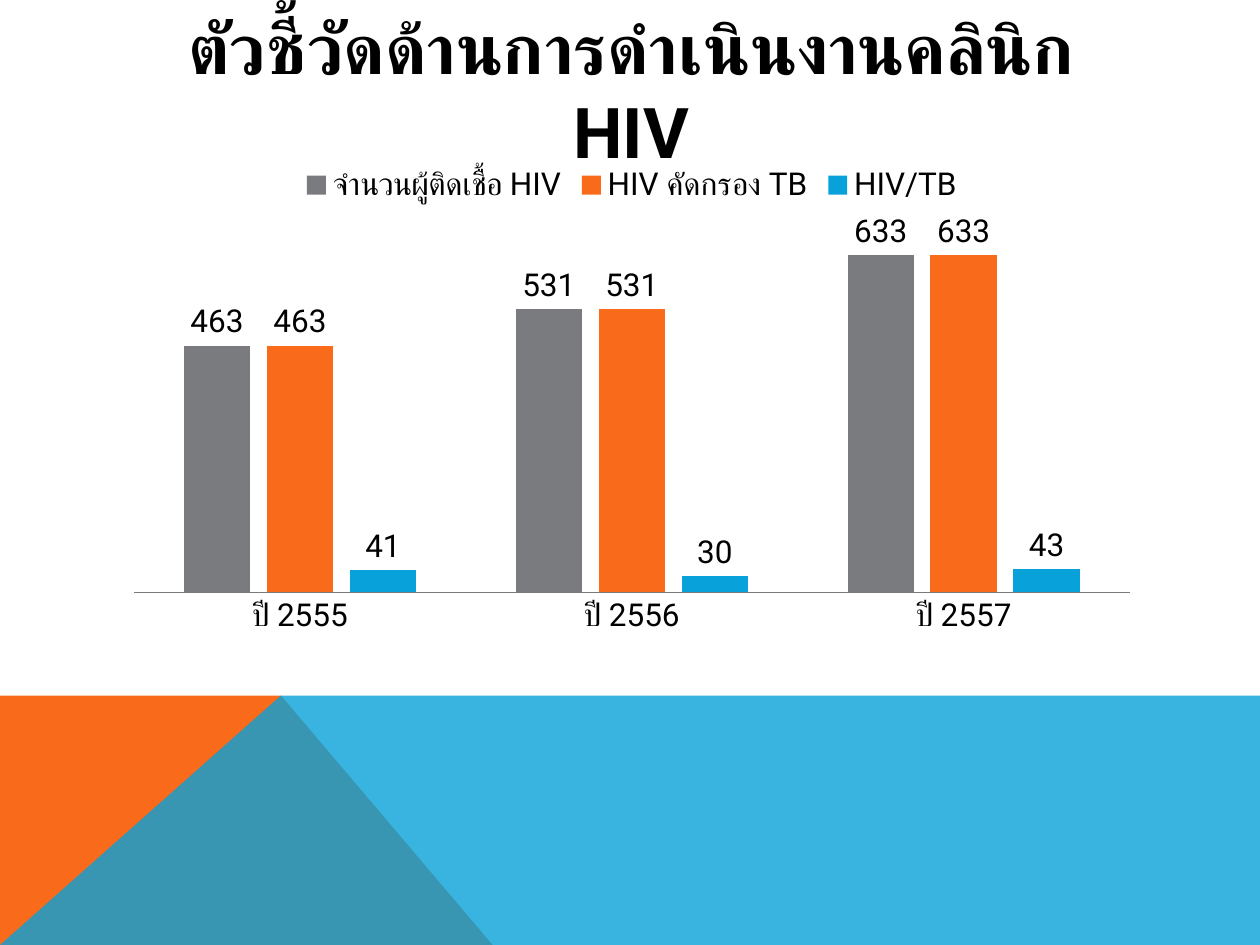
from lxml import etree
from pptx import Presentation
from pptx.chart.data import CategoryChartData
from pptx.dml.color import RGBColor
from pptx.enum import chart as ch, text
from pptx.oxml.ns import qn
from pptx.util import Inches, Pt

FONT = "Roboto"
COLORS = {"black": "000000", "gray": "797B7E", "orange": "F96A1B", "blue": "08A1D9"}
YEARS = ["ปี 2555", "ปี 2556", "ปี 2557"]
SERIES = [
    ("จำนวนผู้ติดเชื้อ HIV", (463, 531, 633), "gray"),
    ("HIV คัดกรอง TB", (463, 531, 633), "orange"),
    ("HIV/TB", (41, 30, 43), "blue"),
]


def rgb(name):
    return RGBColor.from_string(COLORS[name])


def set_font(font, size, bold=False):
    font.name, font.size, font.bold = FONT, Pt(size), bold
    font.color.rgb = rgb("black")


def add_panel(s, points, color, opacity=100):
    """Add a borderless polygon; points are in inches, opacity in percent."""
    corners = [(Inches(x), Inches(y)) for x, y in points]
    builder = s.shapes.build_freeform(*corners[0])
    builder.add_line_segments(corners[1:], close=True)
    sp = builder.convert_to_shape()
    sp.shadow.inherit = False
    sp.fill.solid()
    sp.fill.fore_color.rgb = rgb(color)
    sp.line.fill.background()
    if opacity < 100:
        clr = sp.element.spPr.find(qn("a:solidFill"))[0]
        etree.SubElement(clr, qn("a:alpha"), val=str(opacity * 1000))


def set_title(s, wording):
    sp = s.shapes.title
    sp.left, sp.top, sp.width, sp.height = map(Inches, (0.9, 0.4, 8.22, 0.6))
    tf = sp.text_frame
    tf.text = wording
    tf.word_wrap = True
    tf.auto_size = text.MSO_AUTO_SIZE.NONE
    tf.vertical_anchor = text.MSO_ANCHOR.MIDDLE
    p = tf.paragraphs[0]
    p.alignment = text.PP_ALIGN.CENTER
    r = p.runs[0]
    set_font(r.font, 40, bold=True)
    etree.SubElement(r.font._element, qn("a:cs"), typeface=FONT)


def add_column_chart(s):
    data = CategoryChartData()
    data.categories = YEARS
    for name, values, _ in SERIES:
        data.add_series(name, values)
    chart = s.shapes.add_chart(
        ch.XL_CHART_TYPE.COLUMN_CLUSTERED,
        Inches(0.9), Inches(1.2), Inches(8.23), Inches(3.91), data,
    ).chart
    set_font(chart.font, 18)
    chart.has_title = False
    chart.has_legend = True
    chart.legend.position = ch.XL_LEGEND_POSITION.TOP
    chart.legend.include_in_layout = False

    axis = chart.category_axis
    axis.major_tick_mark = ch.XL_TICK_MARK.NONE
    axis.format.line.color.rgb = rgb("gray")
    axis.format.line.width = Pt(0.75)
    values_axis = chart.value_axis
    values_axis.visible = False
    values_axis.has_major_gridlines = False
    values_axis.minimum_scale, values_axis.maximum_scale = 0, 700

    plot = chart.plots[0]
    plot.vary_by_categories = False
    plot.gap_width, plot.overlap = 150, -25
    for series, (_, _, color) in zip(plot.series, SERIES):
        series.format.fill.solid()
        series.format.fill.fore_color.rgb = rgb(color)
        labels = series.data_labels
        labels.show_value = True
        labels.position = ch.XL_LABEL_POSITION.OUTSIDE_END
        set_font(labels.font, 18)


def main():
    prs = Presentation()
    prs.slide_width, prs.slide_height = Inches(10), Inches(7.5)
    s = prs.slides.add_slide(prs.slide_layouts[5])
    top, peak, bottom = 5.52, 2.23, 7.5
    add_panel(s, [(0, bottom), (0, top), (peak, top), (3.91, bottom)], "orange")
    add_panel(s, [(0, bottom), (peak, top), (10, top), (10, bottom)], "blue", 80)
    set_title(s, "ตัวชี้วัดด้านการดำเนินงานคลินิก HIV")
    add_column_chart(s)
    prs.save("out.pptx")


if __name__ == "__main__":
    main()
